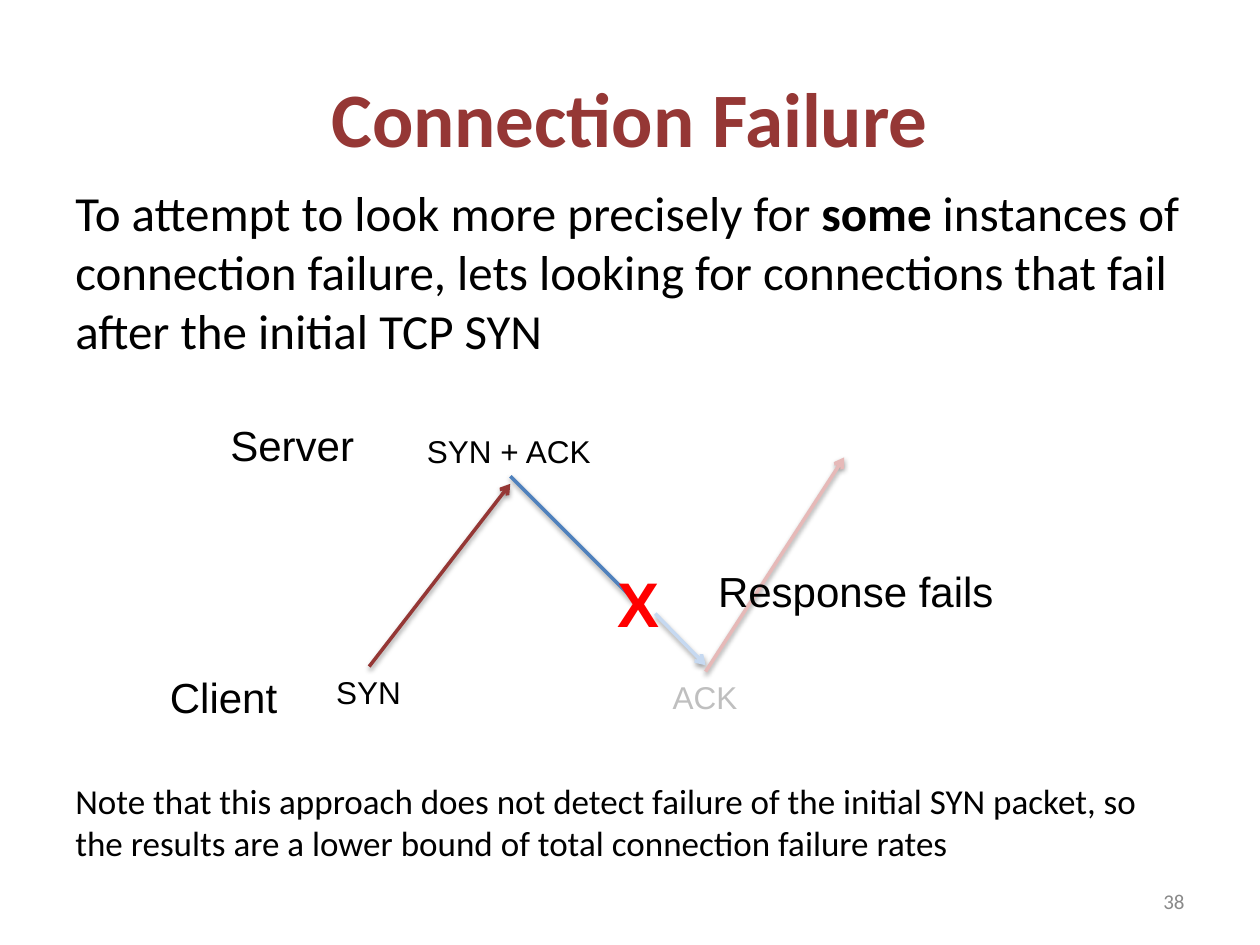
from lxml.etree import SubElement
from pptx import Presentation
from pptx.dml.color import RGBColor
from pptx.enum.shapes import MSO_CONNECTOR as Connector
from pptx.enum.text import MSO_ANCHOR as Anchor, PP_ALIGN as Align
from pptx.oxml.ns import qn
from pptx.util import Inches, Pt

BLACK = RGBColor(0x00, 0x00, 0x00)
MAROON = RGBColor(0x95, 0x37, 0x35)
PALE_RED = RGBColor(0xE6, 0xB9, 0xB8)
BLUE = RGBColor(0x4F, 0x81, 0xBD)
PALE_BLUE = RGBColor(0xC6, 0xD9, 0xF1)
RED = RGBColor(0xFF, 0x00, 0x00)
SILVER = RGBColor(0xBF, 0xBF, 0xBF)
GRAY = RGBColor(0x89, 0x89, 0x89)


def add_text(slide, box, runs, size, color=BLACK, font="Calibri",
             align=Align.LEFT, anchor=Anchor.TOP, wrap=True):
    shape = slide.shapes.add_textbox(*map(Inches, box))
    frame = shape.text_frame
    for name, value in {"word_wrap": wrap, "vertical_anchor": anchor}.items():
        setattr(frame, name, value)
    paragraph = frame.paragraphs[0]
    paragraph.alignment = align
    for text, bold in runs:
        run = paragraph.add_run()
        run.text = text
        run.font.color.rgb = color
        for name, value in {"name": font, "size": Pt(size), "bold": bold}.items():
            setattr(run.font, name, value)


def add_shadow(properties):
    effects = SubElement(properties, qn("a:effectLst"))
    shadow = SubElement(effects, qn("a:outerShdw"), blurRad=str(Pt(3.1)),
                        dist=str(Pt(1.6)), dir="5400000", rotWithShape="0")
    color = SubElement(shadow, qn("a:srgbClr"), val="000000")
    SubElement(color, qn("a:alpha"), val="38000")


def add_packet(slide, start, end, color, arrow):
    connector = slide.shapes.add_connector(
        Connector.STRAIGHT, *map(Inches, (*start, *end)))
    connector.line.color.rgb = color
    connector.line.width = Pt(2)
    properties = connector._element.spPr
    if arrow:
        SubElement(properties.find(qn("a:ln")), qn("a:tailEnd"), type="arrow")
    add_shadow(properties)


def add_title(slide, box):
    add_text(slide, box, [("Connection Failure", True)], 44, MAROON,
             align=Align.CENTER, anchor=Anchor.MIDDLE)


def add_introduction(slide, box):
    add_text(slide, box, [
        ("To attempt to look more precisely for ", False),
        ("some", True),
        (" instances of connection failure, lets looking for connections "
         "that fail after the initial TCP SYN", False),
    ], 28)


def add_note(slide, box):
    add_text(slide, box, [
        ("Note that this approach does not detect failure of the initial SYN "
         "packet, so the results are a lower bound of total connection "
         "failure rates", False),
    ], 20)


def add_slide_number(slide, box):
    add_text(slide, box, [("38", False)], 12, GRAY,
             align=Align.RIGHT, anchor=Anchor.MIDDLE)


def add_handshake(slide, box):
    left, top, _, _ = box

    def label(text, x, y, width, height, size, color=BLACK, bold=False):
        add_text(slide, (left + x, top + y, width, height), [(text, bold)],
                 size, color, "Arial", wrap=False)

    label("Client", 0, 2, 1.07, 0.51, 24)
    label("Server", 0.48, 0, 1.2, 0.51, 24)
    label("SYN", 1.32, 2.01, 0.72, 0.4, 18)
    label("SYN + ACK", 2.04, 0.1, 1.52, 0.4, 18)
    label("ACK", 3.99, 2.05, 0.73, 0.4, 18, SILVER)
    for start, end, color, arrow in (
        ((1.68, 2.01), (2.8, 0.56), MAROON, True),
        ((3.95, 1.59), (4.35, 2), PALE_BLUE, True),
        ((4.35, 2.05), (5.45, 0.35), PALE_RED, True),
        ((2.8, 0.5), (3.8, 1.5), BLUE, False),
    ):
        points = [(left + x, top + y) for x, y in (start, end)]
        add_packet(slide, *points, color, arrow)
    label("X", 3.55, 1.15, 0.54, 0.71, 36, RED, True)
    label("Response fails", 4.35, 1.16, 2.41, 0.51, 24)


def main():
    presentation = Presentation()
    presentation.slide_width = Inches(10)
    presentation.slide_height = Inches(7.5)
    slide = presentation.slides.add_slide(presentation.slide_layouts[6])
    add_title(slide, (0.5, 0.3, 9, 1.25))
    add_introduction(slide, (0.5, 1.4, 9, 1.5))
    add_note(slide, (0.5, 6.14, 9, 0.78))
    add_slide_number(slide, (7.17, 6.95, 2.33, 0.4))
    add_handshake(slide, (1.25, 3.28, 6.76, 2.51))
    presentation.save("out.pptx")


if __name__ == "__main__":
    main()
